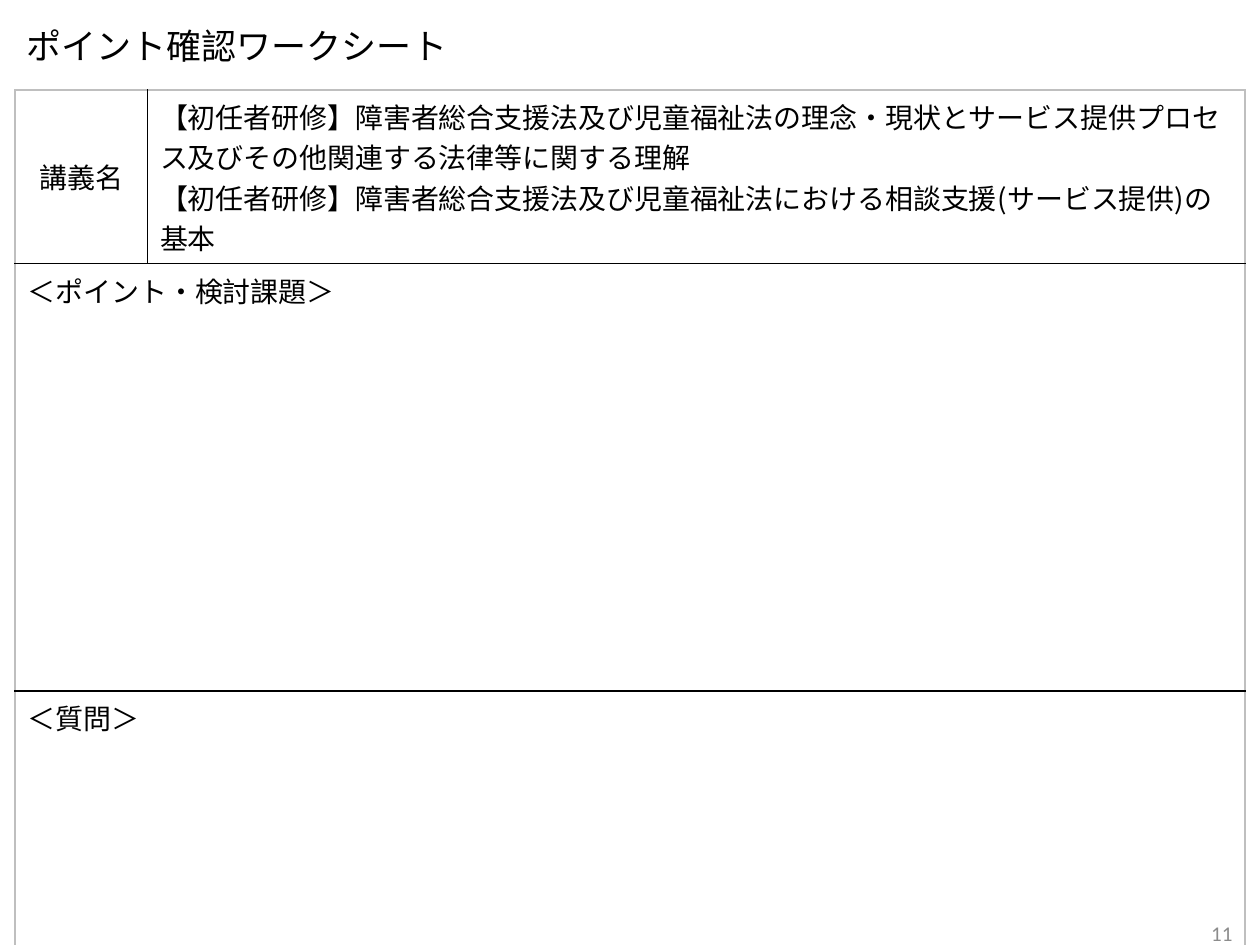
"""Build the lecture point-check worksheet slide."""
from lxml import etree
from pptx import Presentation
from pptx.dml.color import RGBColor
from pptx.enum.text import MSO_ANCHOR, PP_ALIGN
from pptx.oxml.ns import qn
from pptx.util import Inches, Pt

TOP, MIDDLE = MSO_ANCHOR.TOP, MSO_ANCHOR.MIDDLE
LEFT, CENTER, RIGHT = PP_ALIGN.LEFT, PP_ALIGN.CENTER, PP_ALIGN.RIGHT
COLORS = {"text": "000000", "rule": "000000", "frame": "BFBFBF", "number": "8C8C8C"}
JP, LATIN = "Noto Sans CJK JP", "Calibri"
COLS, ROWS = [1.05, 8.71], [1.38, 3.39, 2.3]


def write(tf, lines, size, font, color, align=LEFT):
    for i, line in enumerate(lines):
        p = tf.add_paragraph() if i else tf.paragraphs[0]
        p.alignment = align
        r = p.add_run()
        r.text = line
        r.font.size = Pt(size)
        r.font.name = font
        r.font.color.rgb = RGBColor.from_string(COLORS[color])
        ea = etree.SubElement(r.font._element, qn("a:ea"))
        ea.set("typeface", font)


def border(cell, side, color, width):
    ln = etree.SubElement(cell._tc.get_or_add_tcPr(), qn(f"a:ln{side}"), w=str(Pt(width)))
    fill = etree.SubElement(ln, qn("a:solidFill"))
    etree.SubElement(fill, qn("a:srgbClr"), val=COLORS[color])


prs = Presentation()
prs.slide_width, prs.slide_height = Inches(10), Inches(7.5)
W, H = prs.slide_width, prs.slide_height
s = prs.slides.add_slide(prs.slide_layouts[5])

title = s.shapes.title
title.left, title.top = int(W * 0.011), int(H * 0.026)
title.width, title.height = int(W * 0.9), int(H * 0.05)
tf = title.text_frame
tf.vertical_anchor = MIDDLE
write(tf, ["ポイント確認ワークシート"], 20, JP, "text")
tf.paragraphs[0].line_spacing = 0.9

sp = s.shapes.add_textbox(int(W * 0.755), int(H * 0.961), int(W * 0.233), int(H * 0.053))
tf = sp.text_frame
tf.word_wrap = True
tf.vertical_anchor = MIDDLE
write(tf, ["11"], 12, LATIN, "number", RIGHT)

frame = s.shapes.add_table(len(ROWS), len(COLS), int(W * 0.012), int(H * 0.095),
                           Inches(sum(COLS)), Inches(sum(ROWS)))
table = frame.table
table.first_row = table.horz_banding = False
for col, width in zip(table.columns, COLS):
    col.width = Inches(width)
for row, height in zip(table.rows, ROWS):
    row.height = Inches(height)

last_row, last_col = len(ROWS) - 1, len(COLS) - 1
for i in range(len(ROWS)):
    merged = i > 0
    if merged:
        table.cell(i, 0).merge(table.cell(i, last_col))
    for j in range(len(COLS)):
        cell = table.cell(i, j)
        edges = {"L": j == 0, "R": merged or j == last_col, "T": i == 0, "B": i == last_row}
        for side, outer in edges.items():
            if outer:
                border(cell, side, "frame", 1)
            elif side in "TB":
                border(cell, side, "rule", 1)
            elif not merged:
                border(cell, side, "rule", 0.5)
        cell.fill.background()

contents = [
    (0, 0, ["講義名"], CENTER, MIDDLE),
    (0, 1, ["【初任者研修】障害者総合支援法及び児童福祉法の理念・現状とサービス提供プロセス及びその他関連する法律等に関する理解",
            "【初任者研修】障害者総合支援法及び児童福祉法における相談支援(サービス提供)の基本"], LEFT, TOP),
    (1, 0, ["＜ポイント・検討課題＞"], LEFT, TOP),
    (2, 0, ["＜質問＞"], LEFT, TOP),
]
for i, j, lines, align, anchor in contents:
    cell = table.cell(i, j)
    cell.vertical_anchor = anchor
    write(cell.text_frame, lines, 16, JP, "text", align)

prs.save("out.pptx")
